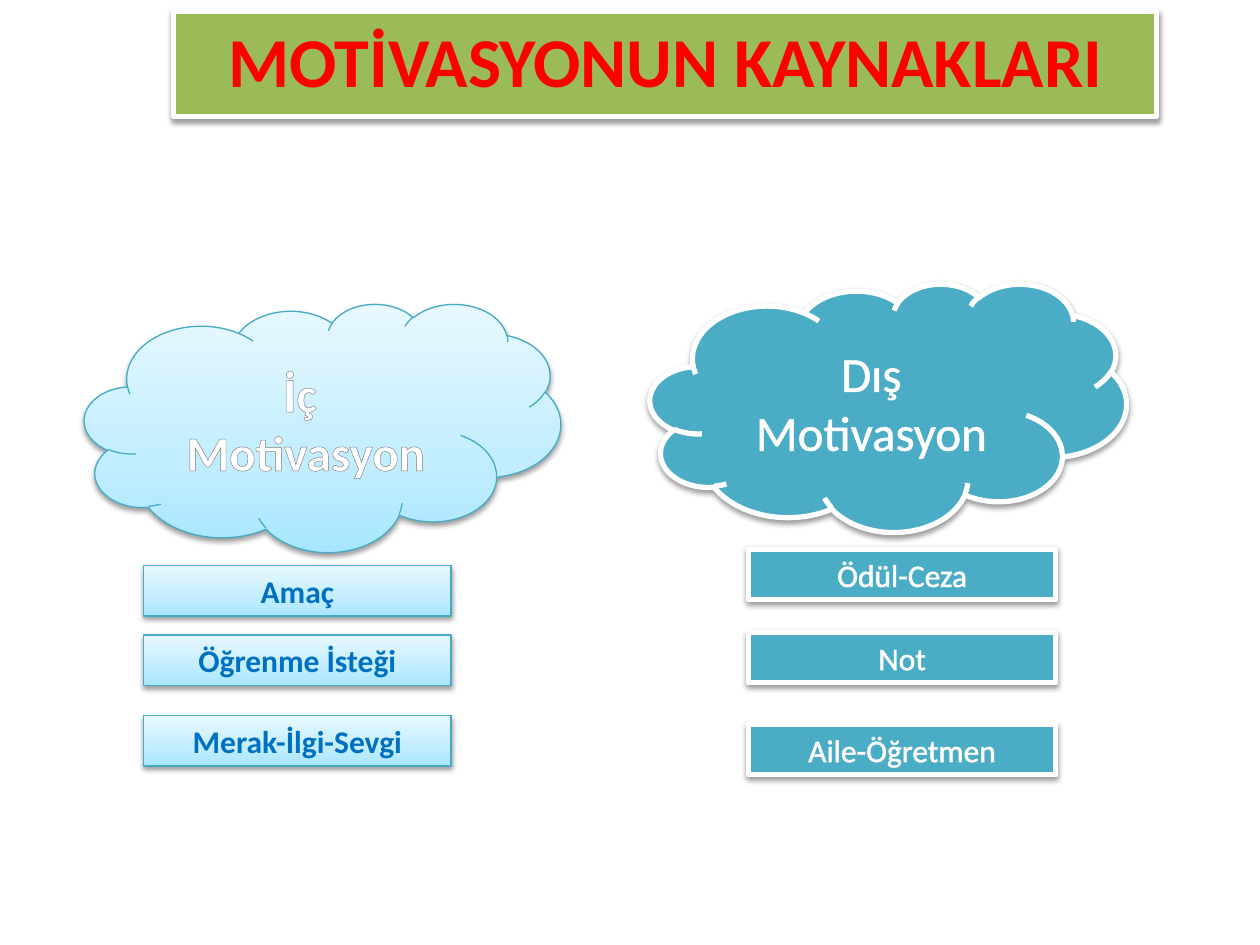
from lxml import etree
from pptx import Presentation
from pptx import util as u
from pptx.dml.color import RGBColor
from pptx.enum import shapes, text
from pptx.oxml.ns import qn

ICE = [(0, "A7E6FF"), (35, "C1EDFF"), (100, "E7F8FF")]
SILVER = [(0, "FFFFFF"), (9, "FFFFFF"), (50, "7F7F7F"), (79, "FFFFFF"), (100, "FFFFFF")]
INNER = {"paint": ICE, "angle": 90, "border": "46AAC5", "width": 0.75}
OUTER = {"paint": "4BACC6", "border": "FFFFFF", "width": 3}
BANNER = {"paint": "9BBB59", "border": "FFFFFF", "width": 3}
WHITE_TEXT = {"paint": "FFFFFF", "outline": ("FFFFFF", 1.45)}
BLUE_TEXT = {"paint": "0070C0", "bold": True}
SILVER_TEXT = {"paint": SILVER, "angle": 270, "bold": True, "outline": ("7D7D7D", 0.83)}
RED_TEXT = {"paint": "FF0000", "bold": True, "outline": ("FFFFFF", 1.45)}


def rgb(value):
    return RGBColor.from_string(value)


def add_child(parent, tag, **attributes):
    return etree.SubElement(parent, qn(tag), {k: str(v) for k, v in attributes.items()})


def apply_paint(fill, owner, paint, angle=0):
    if isinstance(paint, str):
        fill.solid()
        fill.fore_color.rgb = rgb(paint)
        return
    fill.gradient()
    fill.gradient_angle = angle
    stops = owner.find(qn("a:gradFill")).find(qn("a:gsLst"))
    for stop in list(stops):
        stops.remove(stop)
    for percent, color in paint:
        stop = add_child(stops, "a:gs", pos=percent * 1000)
        add_child(stop, "a:srgbClr", val=color)


def add_shadow(shape):
    shape.shadow.inherit = False
    effects = shape._element.spPr.find(qn("a:effectLst"))
    shadow = add_child(effects, "a:outerShdw", blurRad=u.Pt(3.1), dist=u.Pt(1.6),
                       dir=5400000, rotWithShape=0)
    color = add_child(shadow, "a:srgbClr", val="000000")
    add_child(color, "a:alpha", val=38000)


def style_shape(shape, paint, border, width, angle=0):
    apply_paint(shape.fill, shape._element.spPr, paint, angle)
    shape.line.color.rgb = rgb(border)
    shape.line.width = u.Pt(width)
    add_shadow(shape)


def style_run(run, size, paint, angle=0, bold=False, outline=None):
    run.font.name = "Calibri"
    run.font.size = u.Pt(size)
    run.font.bold = bold
    properties = run._r.get_or_add_rPr()
    apply_paint(run.font.fill, properties, paint, angle)
    if outline:
        color, width = outline
        line = etree.Element(qn("a:ln"), {"w": str(u.Pt(width)), "cmpd": "sng"})
        add_child(add_child(line, "a:solidFill"), "a:srgbClr", val=color)
        add_child(line, "a:prstDash", val="solid")
        properties.insert(0, line)


def write(shape, wording, size, look, anchor=text.MSO_ANCHOR.TOP, grow=True):
    frame = shape.text_frame
    frame.text = wording
    frame.word_wrap = True
    frame.vertical_anchor = anchor
    frame.auto_size = (text.MSO_AUTO_SIZE.SHAPE_TO_FIT_TEXT if grow
                       else text.MSO_AUTO_SIZE.NONE)
    for paragraph in frame.paragraphs:
        paragraph.alignment = text.PP_ALIGN.CENTER
        for run in paragraph.runs:
            style_run(run, size, **look)


def add_title(slide, wording):
    title = slide.shapes.title
    title.left, title.top = u.Inches(1.38), u.Inches(0.09)
    title.width, title.height = u.Inches(7.8), u.Inches(0.77)
    style_shape(title, **BANNER)
    write(title, wording, 40, RED_TEXT)


def add_cloud(slide, left, top, wording, style, look):
    cloud = slide.shapes.add_shape(shapes.MSO_SHAPE.CLOUD, u.Inches(left), u.Inches(top),
                                   u.Inches(3.78), u.Inches(1.97))
    style_shape(cloud, **style)
    write(cloud, wording, 28, look, text.MSO_ANCHOR.MIDDLE, grow=False)


def add_sources(slide, left, sources, style, look):
    for top, wording in sources:
        label = slide.shapes.add_shape(shapes.MSO_SHAPE.RECTANGLE, u.Inches(left),
                                       u.Inches(top), u.Inches(2.44), u.Inches(0.4))
        style_shape(label, **style)
        write(label, wording, 18, look)


def main():
    deck = Presentation()
    deck.slide_width, deck.slide_height = u.Inches(10), u.Inches(7.5)
    slide = deck.slides.add_slide(deck.slide_layouts.get_by_name("Title Only"))
    add_title(slide, "MOTİVASYONUN KAYNAKLARI")
    add_cloud(slide, 0.67, 2.41, "İç \nMotivasyon", INNER, SILVER_TEXT)
    add_cloud(slide, 5.16, 2.25, "Dış\nMotivasyon", OUTER, WHITE_TEXT)
    add_sources(slide, 1.14, [(4.49, "Amaç"), (5.04, "Öğrenme İsteği"),
                              (5.68, "Merak-İlgi-Sevgi")], INNER, BLUE_TEXT)
    add_sources(slide, 5.94, [(4.36, "Ödül-Ceza"), (5.02, "Not"),
                              (5.75, "Aile-Öğretmen")], OUTER, WHITE_TEXT)
    deck.save("out.pptx")


if __name__ == "__main__":
    main()
